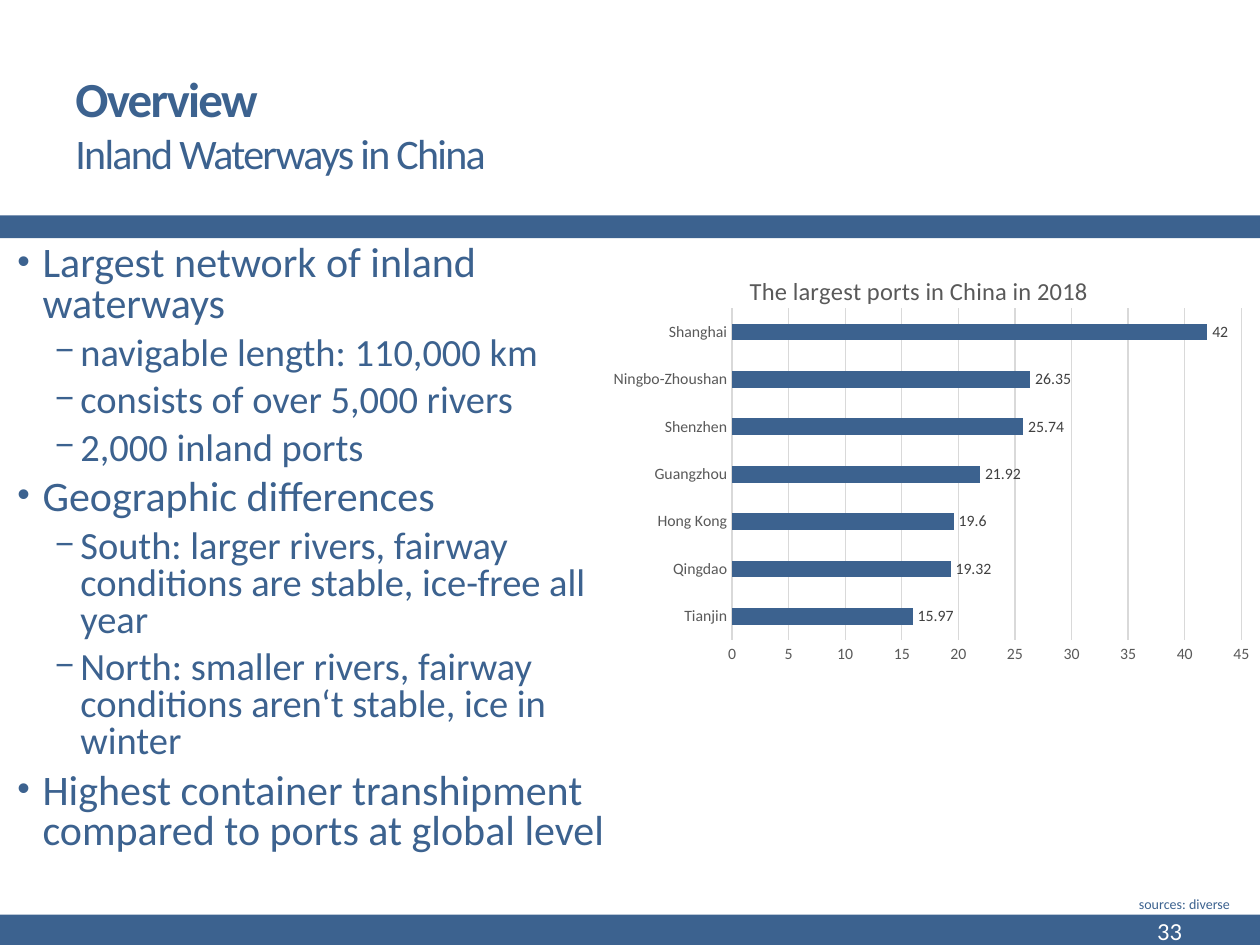
from lxml import etree
from pptx import Presentation
from pptx import util as u
from pptx.chart import data as chart_data
from pptx.dml import color
from pptx.enum import chart as ch, shapes, text
from pptx.oxml import ns, parse_xml

BLUE, GRAY, GRID, FONT = "3C628F", "595959", "D9D9D9", "Calibri"


def rgb(value):
    return color.RGBColor.from_string(value)


def style(font, size, value=BLUE, bold=False):
    font.name, font.size, font.bold = FONT, u.Pt(size), bold
    font.color.rgb = rgb(value)


deck = Presentation()
deck.slide_width, deck.slide_height = u.Inches(10), u.Inches(7.5)
page = deck.slides.add_slide(deck.slide_layouts[6])

# Footer band and header rule
for left, top, width, height in [(-0.04, 7.26, 10.16, 0.5), (-0.02, 1.71, 10.12, 0.18)]:
    band = page.shapes.add_shape(shapes.MSO_SHAPE.RECTANGLE, u.Inches(left), u.Inches(top),
                                 u.Inches(width), u.Inches(height))
    band.shadow.inherit = False
    band.fill.solid()
    band.fill.fore_color.rgb = rgb(BLUE)
    band.line.fill.background()

# Title
box = page.shapes.add_textbox(u.Inches(0.5), u.Inches(0.44), u.Inches(5.21), u.Inches(1.08))
box.text_frame.word_wrap = True
box.text_frame.vertical_anchor = text.MSO_ANCHOR.MIDDLE
para = box.text_frame.paragraphs[0]
for words, size, bold in [("Overview", 28, True), ("Inland Waterways in China", 24, False)]:
    if para.runs:
        para.add_line_break()
    span = para.add_run()
    span.text = words
    style(span.font, size, BLUE, bold)
    span._r.get_or_add_rPr().set("spc", "-100")

# Bullet list: level, wording
points = [
    (0, "Largest network of inland waterways"),
    (1, "navigable length: 110,000 km"),
    (1, "consists of over 5,000 rivers"),
    (1, "2,000 inland ports"),
    (0, "Geographic differences"),
    (1, "South: larger rivers, fairway conditions are stable, ice-free all year"),
    (1, "North: smaller rivers, fairway conditions aren‘t stable, ice in winter"),
    (0, "Highest container transhipment compared to ports at global level"),
]
levels = [("•", 24, 0.2), ("−", 22, 0.5)]  # bullet, size, indent
box = page.shapes.add_textbox(u.Inches(0.04), u.Inches(1.9), u.Inches(4.97), u.Inches(5.19))
frame = box.text_frame
frame.word_wrap = True
for index, (level, words) in enumerate(points):
    para = frame.add_paragraph() if index else frame.paragraphs[0]
    para.text = words
    para.level = level
    bullet, size, indent = levels[level]
    props = para._p.get_or_add_pPr()
    props.set("marL", str(u.Inches(indent)))
    props.set("indent", str(u.Inches(-0.2)))
    bullet_color = etree.SubElement(props, ns.qn("a:buClr"))
    etree.SubElement(bullet_color, ns.qn("a:srgbClr"), val=BLUE)
    etree.SubElement(props, ns.qn("a:buSzPct"), val="85000")
    etree.SubElement(props, ns.qn("a:buFont"), typeface="Arial")
    etree.SubElement(props, ns.qn("a:buChar"), char=bullet)
    para.line_spacing = 0.8
    para.space_before = u.Pt(6 if index else 0)
    style(para.font, size)

# Page number and sources
for words, left, top, width, height, size, value, align, anchor in [
    ("33", 8.31, 7.21, 1.17, 0.36, 14, "FFFFFF", text.PP_ALIGN.RIGHT, text.MSO_ANCHOR.MIDDLE),
    ("sources: diverse", 8.94, 7.06, 1.07, 0.24, 8, BLUE, text.PP_ALIGN.LEFT, text.MSO_ANCHOR.TOP),
]:
    box = page.shapes.add_textbox(u.Inches(left), u.Inches(top), u.Inches(width), u.Inches(height))
    box.text_frame.word_wrap = True
    box.text_frame.vertical_anchor = anchor
    para = box.text_frame.paragraphs[0]
    para.text = words
    para.alignment = align
    style(para.font, size, value)

# Port chart
ports = {"Tianjin": 15.97, "Qingdao": 19.32, "Hong Kong": 19.6, "Guangzhou": 21.92,
         "Shenzhen": 25.74, "Ningbo-Zhoushan": 26.35, "Shanghai": 42}
data = chart_data.CategoryChartData()
data.categories = list(ports)
data.add_series("Series 1", list(ports.values()))
chart = page.shapes.add_chart(ch.XL_CHART_TYPE.BAR_CLUSTERED, u.Inches(4.76), u.Inches(1.9),
                              u.Inches(5.25), u.Inches(3.42), data).chart
style(chart.font, 10, "000000")
chart.has_legend = False
chart.has_title = True
para = chart.chart_title.text_frame.paragraphs[0]
para.text = "The largest ports in China in 2018"
style(para.font, 14, GRAY)
chart.chart_title.include_in_layout = False

plot = chart.plots[0]
plot.gap_width = 182
plot.vary_by_categories = False
bars = plot.series[0]
bars.format.fill.solid()
bars.format.fill.fore_color.rgb = rgb(BLUE)
plot.has_data_labels = True
labels = plot.data_labels
labels.show_value = True
labels.position = ch.XL_LABEL_POSITION.OUTSIDE_END
style(labels.font, 9, "404040")

for axis in (chart.category_axis, chart.value_axis):
    axis.major_tick_mark = axis.minor_tick_mark = ch.XL_TICK_MARK.NONE
    style(axis.tick_labels.font, 9, GRAY)
chart.value_axis.minimum_scale, chart.value_axis.maximum_scale = 0, 45
chart.value_axis.major_unit = 5
chart.value_axis.format.line.fill.background()
for line in (chart.category_axis.format.line, chart.value_axis.major_gridlines.format.line):
    line.color.rgb = rgb(GRID)
    line.width = u.Pt(0.75)

# Fixed places for the title and the plot area
for parent, places in [
    (chart.chart_title._element, {"x": 0.22, "y": 0.07}),
    (chart._chartSpace.chart.plotArea, {"x": 0.2, "y": 0.16, "w": 0.77, "h": 0.77}),
]:
    for old in parent.findall(ns.qn("c:layout")):
        parent.remove(old)
    target = '<c:layoutTarget val="inner"/>' if "w" in places else ""
    modes = "".join(f'<c:{key}Mode val="edge"/>' for key in "xy")
    sizes = "".join(f'<c:{key} val="{value}"/>' for key, value in places.items())
    layout = parse_xml(f'<c:layout {ns.nsdecls("c")}><c:manualLayout>{target}{modes}{sizes}'
                       '</c:manualLayout></c:layout>')
    heading = parent.find(ns.qn("c:tx"))
    parent.insert(0 if heading is None else 1, layout)

deck.save("out.pptx")
